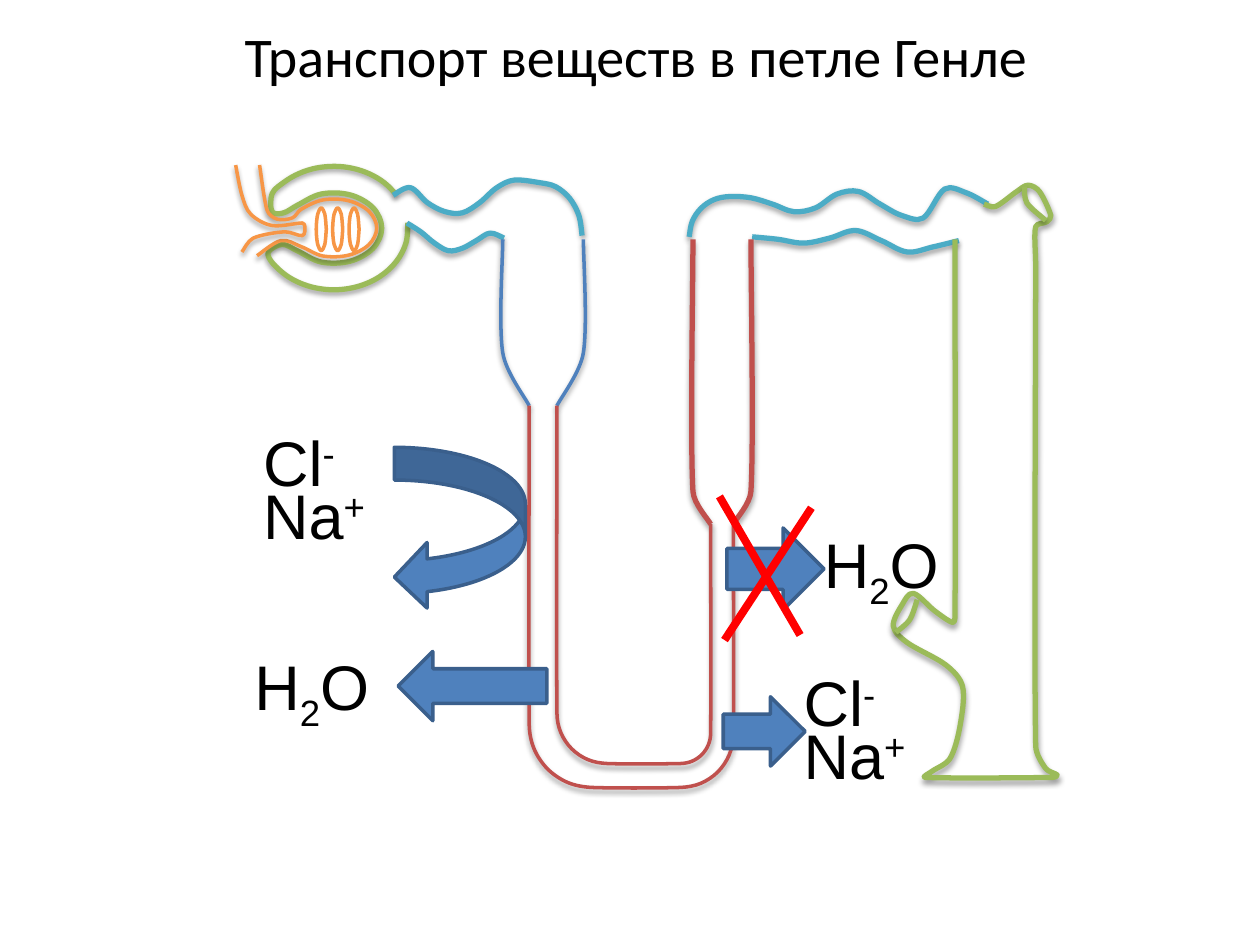
from dataclasses import dataclass
from math import cos, dist, radians, sin

from lxml import etree
from pptx import Presentation
from pptx import util as u
from pptx.dml import color
from pptx.enum import shapes, text
from pptx.oxml import ns


@dataclass(frozen=True)
class Theme:
    text: str = "000000"
    paper: str = "FFFFFF"
    duct: str = "9BBB59"
    vessel: str = "F79646"
    tubule: str = "4BACC6"
    flow: str = "4F81BD"
    flow_edge: str = "3A5F8C"
    loop: str = "C0504D"
    block: str = "FF0000"
    title_font: str = "Calibri"
    label_font: str = "Arial"
    title_size: int = 32
    label_size: int = 36
    thin: float = 2
    thick: float = 3
    cross: float = 4.5


@dataclass(frozen=True)
class Limb:
    axis: float
    wide: float
    narrow: float
    shoulder: float
    neck: float

    def wall(self, side):
        outer, inner = self.axis + side * self.wide, self.axis + side * self.narrow
        return [(outer, CORTEX), (outer, self.shoulder), (inner, self.neck)]


THEME = Theme()
SUB, SUPER = "-25000", "30000"
CHLORIDE = [("Cl", None), ("-", SUPER)]
SODIUM = [("Na", None), ("+", SUPER)]
WATER = [("Н", None), ("2", SUB), ("О", None)]
LEFT, RIGHT = -1, 1
CORTEX = 0.9
DESCENDING = Limb(axis=3.31, wide=0.32, narrow=0.11, shoulder=1.8, neck=2.22)
ASCENDING = Limb(axis=4.73, wide=0.23, narrow=0.09, shoulder=2.9, neck=3.16)


def rgb(value):
    return color.RGBColor.from_string(value)


def place(box, x, y):
    return u.Inches(box[0] + x), u.Inches(box[1] + y)


def arc(center, radii, first, last, steps=8):
    angles = [radians(first + (last - first) * i / steps) for i in range(steps + 1)]
    return [(center[0] + radii[0] * cos(a), center[1] + radii[1] * sin(a)) for a in angles]


def wave(first, last, depths):
    step = (last - first) / (len(depths) - 1)
    return [(first + i * step, depth) for i, depth in enumerate(depths)]


def hairpin(side, bottom, left_radius, right_radius):
    left = DESCENDING.axis + side * DESCENDING.narrow
    right = ASCENDING.axis - side * ASCENDING.narrow
    left_center = (left + left_radius, bottom - left_radius)
    right_center = (right - right_radius, bottom - right_radius)
    return [(left, DESCENDING.neck),
            *arc(left_center, (left_radius, left_radius), 180, 90, 4),
            *arc(right_center, (right_radius, right_radius), 90, 0, 4),
            (right, ASCENDING.neck)]


def handle(before, knot, after, toward):
    span = dist(before, after) or 1
    reach = min(span / 6, dist(knot, toward) / 3)
    sign = 1 if toward == after else -1
    return tuple(k + sign * reach * (a - b) / span for k, a, b in zip(knot, after, before))


def smooth(curve):
    points = curve._element.xpath(".//a:path//a:pt")
    knots = [(int(p.get("x")), int(p.get("y"))) for p in points]
    padded = [knots[0], *knots, knots[-1]]
    for i, segment in enumerate(curve._element.xpath(".//a:path/a:lnTo")):
        before, start, end, after = padded[i:i + 4]
        bezier = etree.Element(ns.qn("a:cubicBezTo"))
        controls = (handle(before, start, end, end), handle(start, end, after, start), end)
        for x, y in controls:
            etree.SubElement(bezier, ns.qn("a:pt"), x=str(round(x)), y=str(round(y)))
        segment.getparent().replace(segment, bezier)


def add_shadow(curve):
    effects = curve._element.spPr.find(ns.qn("a:effectLst"))
    shadow = etree.SubElement(effects, ns.qn("a:outerShdw"), blurRad="39370", dist="22860",
                              dir="5400000", rotWithShape="0")
    black = etree.SubElement(shadow, ns.qn("a:srgbClr"), val=THEME.text)
    etree.SubElement(black, ns.qn("a:alpha"), val="36000")


def add_curve(slide, box, knots, tint, width, closed=False):
    start, *rest = [place(box, x, y) for x, y in knots]
    builder = slide.shapes.build_freeform(*start)
    builder.add_line_segments(rest, close=closed)
    curve = builder.convert_to_shape()
    smooth(curve)
    curve.line.color.rgb = rgb(tint)
    curve.line.width = u.Pt(width)
    curve.shadow.inherit = False
    if closed:
        curve.fill.solid()
        curve.fill.fore_color.rgb = rgb(THEME.paper)
    else:
        curve.fill.background()
        add_shadow(curve)


def add_label(slide, box, x, y, width, parts):
    label = slide.shapes.add_textbox(*place(box, x, y), u.Inches(width), u.Inches(0.71))
    frame = label.text_frame
    frame.word_wrap = False
    frame.auto_size = text.MSO_AUTO_SIZE.SHAPE_TO_FIT_TEXT
    for wording, baseline in parts:
        run = frame.paragraphs[0].add_run()
        run.text = wording
        run.font.name = THEME.label_font
        run.font.size = u.Pt(THEME.label_size)
        run.font.color.rgb = rgb(THEME.text)
        if baseline:
            run.font._element.set("baseline", baseline)


def add_salt(slide, box, x, y):
    add_label(slide, box, x, y, 0.79, CHLORIDE)
    add_label(slide, box, x, y + 0.42, 1.04, SODIUM)


def add_flow(slide, box, kind, x, y, width, height):
    arrow = slide.shapes.add_shape(kind, *place(box, x, y), u.Inches(width), u.Inches(height))
    arrow.shadow.inherit = False
    arrow.fill.solid()
    arrow.fill.fore_color.rgb = rgb(THEME.flow)
    arrow.line.color.rgb = rgb(THEME.flow_edge)
    arrow.line.width = u.Pt(THEME.thin)


def add_stroke(slide, box, start, end):
    stroke = slide.shapes.add_connector(
        shapes.MSO_CONNECTOR.STRAIGHT, *place(box, *start), *place(box, *end))
    stroke.line.color.rgb = rgb(THEME.block)
    stroke.line.width = u.Pt(THEME.cross)
    etree.SubElement(stroke._element.spPr, ns.qn("a:effectLst"))


def draw_title(slide, box):
    title = slide.shapes.add_textbox(*map(u.Inches, box))
    frame = title.text_frame
    frame.word_wrap = True
    frame.vertical_anchor = text.MSO_ANCHOR.MIDDLE
    frame.text = "Транспорт веществ в петле Генле"
    heading = frame.paragraphs[0]
    heading.alignment = text.PP_ALIGN.CENTER
    font = heading.runs[0].font
    font.name, font.size = THEME.title_font, u.Pt(THEME.title_size)
    font.color.rgb = rgb(THEME.text)


def draw_corpuscle(slide, box):
    center, outer, inner, tuft = (1.65, 0.81), (0.59, 0.49), (0.38, 0.28), (0.34, 0.23)
    upper_lip, lower_lip = [(1.16, 0.68), (1.25, 0.69)], [(1.24, 0.94), (1.13, 1)]
    capsule = [*arc(center, outer, -33, -146), *upper_lip, *arc(center, inner, -140, 140),
               *lower_lip, *arc(center, outer, 146, -5)]
    glomerulus = [(1.06, 0.31), (1.12, 0.67), (1.2, 0.74), (1.32, 0.73),
                  *arc(center, tuft, -140, 140), (1.23, 0.91), (1.04, 1.03)]
    arteriole = [(0.87, 0.31), (0.92, 0.55), (0.99, 0.7), (1.16, 0.79), (1.4, 0.77),
                 (1.42, 0.8), (1.4, 0.87), (1.26, 0.84), (1.01, 0.89), (0.92, 1)]
    add_curve(slide, box, capsule, THEME.duct, THEME.thick)
    for vessel in (glomerulus, arteriole):
        add_curve(slide, box, vessel, THEME.vessel, THEME.thin)
    for i in range(3):
        capillary = arc((1.55 + i * 0.13, 0.82), (0.04, 0.17), 0, 360)
        add_curve(slide, box, capillary, THEME.vessel, THEME.thin, closed=True)


def draw_tubules(slide, box):
    proximal_roof = [
        *wave(2.12, 3.08, (0.55, 0.49, 0.61, 0.68, 0.69, 0.61, 0.49, 0.43)),
        *arc((3.28, 0.87), (0.34, 0.42), -90, 0, 4)]
    proximal_floor = wave(2.23, 3, (0.77, 0.84, 0.93, 0.99, 0.97, 0.91, 0.85, 0.89))
    distal_roof = [
        *arc((4.79, 0.88), (0.32, 0.32), 180, 270, 4),
        *wave(4.96, 6.84, (0.57, 0.62, 0.68, 0.65, 0.54, 0.52, 0.62, 0.71, 0.73, 0.5, 0.53, 0.62))]
    distal_floor = wave(4.97, 6.61, (0.88, 0.9, 0.93, 0.89, 0.83, 0.91, 1, 0.96, 0.91))
    for wall in (proximal_roof, proximal_floor, distal_roof, distal_floor):
        add_curve(slide, box, wall, THEME.tubule, THEME.thick)


def draw_loop(slide, box):
    for side in (LEFT, RIGHT):
        add_curve(slide, box, DESCENDING.wall(side), THEME.flow, THEME.thin)
        add_curve(slide, box, ASCENDING.wall(side), THEME.loop, THEME.thick)
    outer_bend = hairpin(LEFT, bottom=5.25, left_radius=0.5, right_radius=0.42)
    inner_bend = hairpin(RIGHT, bottom=5.06, left_radius=0.4, right_radius=0.24)
    for bend in (outer_bend, inner_bend):
        add_curve(slide, box, bend, THEME.loop, THEME.thin)


def draw_duct(slide, box):
    left, right, base = 6.58, 7.22, 5.17
    crown = [(6.81, 0.62), (6.9, 0.64), (7.07, 0.52), (7.16, 0.47), (7.25, 0.52), (7.34, 0.71),
             (7.31, 0.76), (right, 0.8)]
    foot = [(7.3, 5.1), (7.39, 5.15), (7.36, base), (6.34, base), (6.4, 5.12), (6.54, 5.02)]
    branch = [(6.62, 4.76), (6.64, 4.45), (6.51, 4.28), (6.2, 4.1), (6.09, 3.97), (6.16, 3.8),
              (6.25, 3.71), (6.42, 3.85), (6.56, 3.94)]
    wall = [*crown, (right, 1.1), (right, 4.92), *foot, *branch, (left, 3.88), (left, CORTEX)]
    upper_rim = [(7.13, 0.48), (7.15, 0.61), (7.3, 0.75)]
    lower_rim = [(6.28, 3.76), (6.22, 3.92), (6.11, 4.02)]
    for outline in (wall, upper_rim, lower_rim):
        add_curve(slide, box, outline, THEME.duct, THEME.thick)


def draw_descending_exchange(slide, box):
    add_salt(slide, box, 0.07, 0)
    add_flow(slide, box, shapes.MSO_SHAPE.CURVED_LEFT_ARROW, 1.21, 0.24, 1.04, 1.29)
    add_flow(slide, box, shapes.MSO_SHAPE.LEFT_ARROW, 1.24, 1.86, 1.18, 0.55)
    add_label(slide, box, 0, 1.78, 1.15, WATER)


def draw_ascending_exchange(slide, box):
    add_salt(slide, box, 0.57, 1.28)
    add_flow(slide, box, shapes.MSO_SHAPE.RIGHT_ARROW, 0.03, 1.59, 0.65, 0.55)
    add_flow(slide, box, shapes.MSO_SHAPE.RIGHT_ARROW, 0.06, 0.25, 0.77, 0.65)
    add_label(slide, box, 0.73, 0.18, 1.15, WATER)
    add_stroke(slide, box, (0, 0), (0.64, 1.1))
    add_stroke(slide, box, (0.04, 1.14), (0.73, 0.09))


def main():
    deck = Presentation()
    deck.slide_width, deck.slide_height = u.Inches(10), u.Inches(7.5)
    slide = deck.slides.add_slide(deck.slide_layouts[6])
    draw_title(slide, (0.55, 0, 9, 0.87))
    for draw_part in (draw_corpuscle, draw_tubules, draw_loop, draw_duct):
        draw_part(slide, (1, 1, 8, 5.5))
    draw_descending_exchange(slide, (1.92, 3.31, 2.42, 2.49))
    draw_ascending_exchange(slide, (5.71, 3.94, 1.88, 2.4))
    deck.save("out.pptx")


if __name__ == "__main__":
    main()
